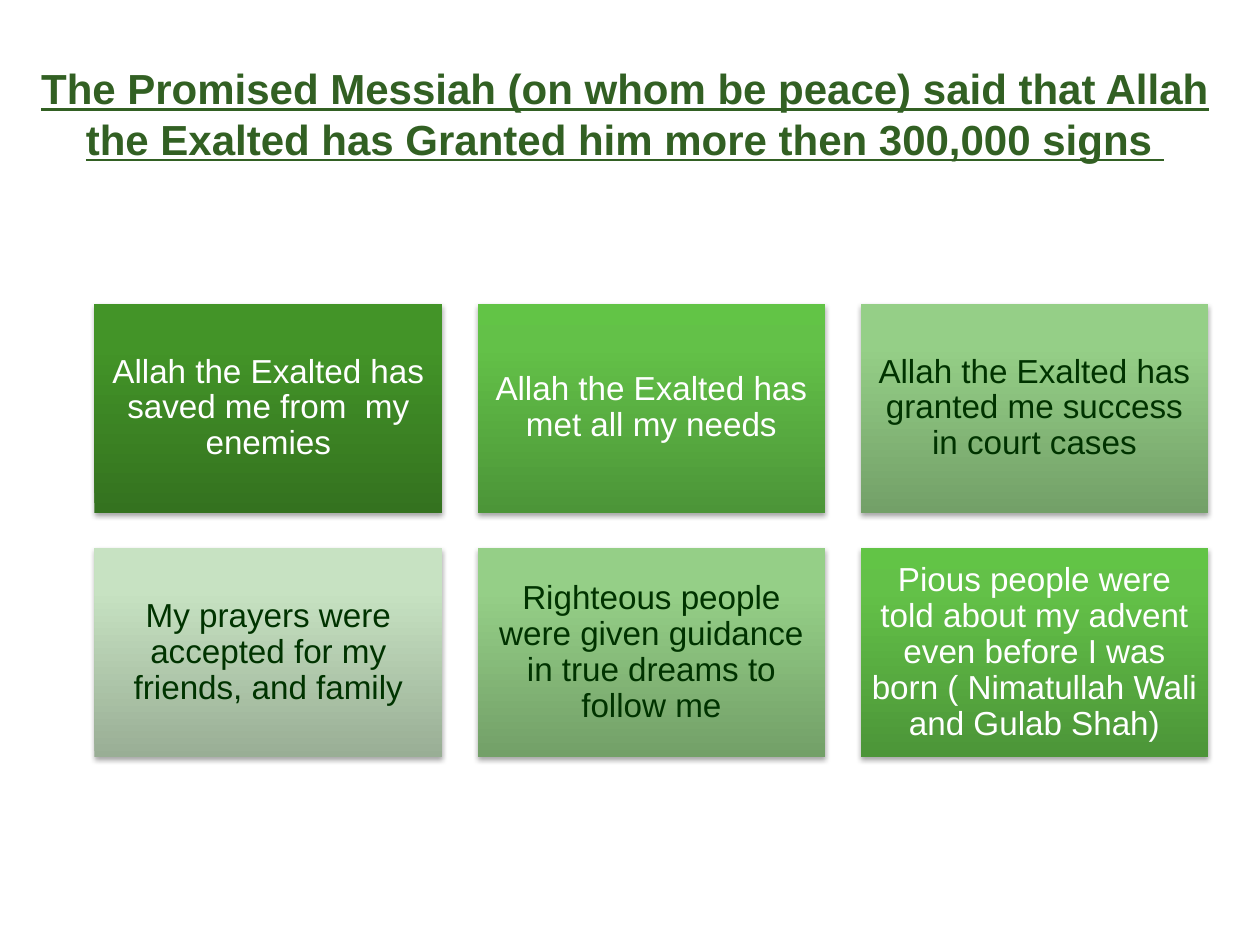
from lxml import etree
from pptx import Presentation
from pptx.dml.color import RGBColor
from pptx.enum.shapes import MSO_SHAPE
from pptx.enum.text import MSO_ANCHOR, PP_ALIGN
from pptx.oxml.ns import qn
from pptx.util import Inches, Pt

RECT = MSO_SHAPE.RECTANGLE
TOP, MIDDLE = MSO_ANCHOR.TOP, MSO_ANCHOR.MIDDLE
CENTER = PP_ALIGN.CENTER

TITLE = ("The Promised Messiah (on whom be peace) said that Allah "
         "the Exalted has Granted him more then 300,000 signs ")
SIGNS = [
    ("Allah the Exalted has saved me from  my enemies", "deep"),
    ("Allah the Exalted has met all my needs", "bright"),
    ("Allah the Exalted has granted me success in court cases", "soft"),
    ("My prayers were accepted for my friends, and family", "pale"),
    ("Righteous people were given guidance in true dreams to follow me",
     "soft"),
    ("Pious people were told about my advent even before I was born "
     "( Nimatullah Wali and Gulab Shah)", "bright"),
]
THEME = {
    "font": "Arial",
    "title": "326023",
    "title_size": 24,
    "card_size": 19,
    "stops": (0, 80, 100),
    # tone: colours from bottom to top, then text colour
    "deep": (("34721F", "439428", "429726"), "FFFFFF"),
    "bright": (("4C9538", "63C148", "62C446"), "FFFFFF"),
    "soft": (("73A068", "95CF87", "95D286"), "003300"),
    "pale": (("99AE95", "C7E2C2", "C8E3C2"), "003300"),
}
COLS, LEFT, UPPER = 3, 0.75, 2.41
WIDE, HIGH, GAP = 2.76, 1.66, 0.28


def write(shape, text, size, color, anchor=MIDDLE, inset=0.0, bold=None,
          under=None, line=None, after=0):
    frame = shape.text_frame
    frame.word_wrap = True
    frame.vertical_anchor = anchor
    frame.margin_left = frame.margin_right = Inches(inset)
    frame.margin_top = frame.margin_bottom = Inches(inset)
    para = frame.paragraphs[0]
    para.alignment = CENTER
    para.line_spacing = line
    para.space_after = Pt(after)
    run = para.add_run()
    run.text = text
    font = run.font
    font.name, font.size = THEME["font"], Pt(size)
    font.bold, font.underline = bold, under
    font.color.rgb = RGBColor.from_string(color)


def add_node(parent, tag, **attrs):
    node = etree.SubElement(parent, qn(tag))
    for name, value in attrs.items():
        node.set(name, str(value))
    return node


def shade(shape, colors):
    """Fill with a three-stop gradient that rises from the bottom."""
    shape.fill.gradient()
    shape.fill.gradient_angle = 90
    stops = shape._element.spPr.find(".//" + qn("a:gsLst"))
    for old in list(stops):
        stops.remove(old)
    for place, color in zip(THEME["stops"], colors):
        stop = add_node(stops, "a:gs", pos=place * 1000)
        add_node(stop, "a:srgbClr", val=color)


def drop_shadow(shape):
    shape.shadow.inherit = False
    effects = shape._element.spPr.find(qn("a:effectLst"))
    shadow = add_node(effects, "a:outerShdw", blurRad=Pt(3.1), dist=Pt(1.8),
                      dir=90 * 60000, rotWithShape=0)
    color = add_node(shadow, "a:srgbClr", val="000000")
    add_node(color, "a:alpha", val=35000)


def add_card(slide, index, text, tone):
    row, col = divmod(index, COLS)
    card = slide.shapes.add_shape(
        RECT, Inches(LEFT + col * (WIDE + GAP)),
        Inches(UPPER + row * (HIGH + GAP)), Inches(WIDE), Inches(HIGH))
    colors, ink = THEME[tone]
    shade(card, colors)
    card.line.fill.background()
    drop_shadow(card)
    size = THEME["card_size"]
    write(card, text, size, ink, inset=0.08, line=0.9)


def main():
    deck = Presentation()
    deck.slide_width, deck.slide_height = Inches(10), Inches(7.5)
    slide = deck.slides.add_slide(deck.slide_layouts[6])
    title = slide.shapes.add_textbox(
        Inches(0.25), Inches(0.5), Inches(9.42), Inches(1))
    write(title, TITLE, THEME["title_size"], THEME["title"], anchor=TOP,
          bold=True, under=True)
    for index, (text, tone) in enumerate(SIGNS):
        add_card(slide, index, text, tone)
    deck.save("out.pptx")


if __name__ == "__main__":
    main()
